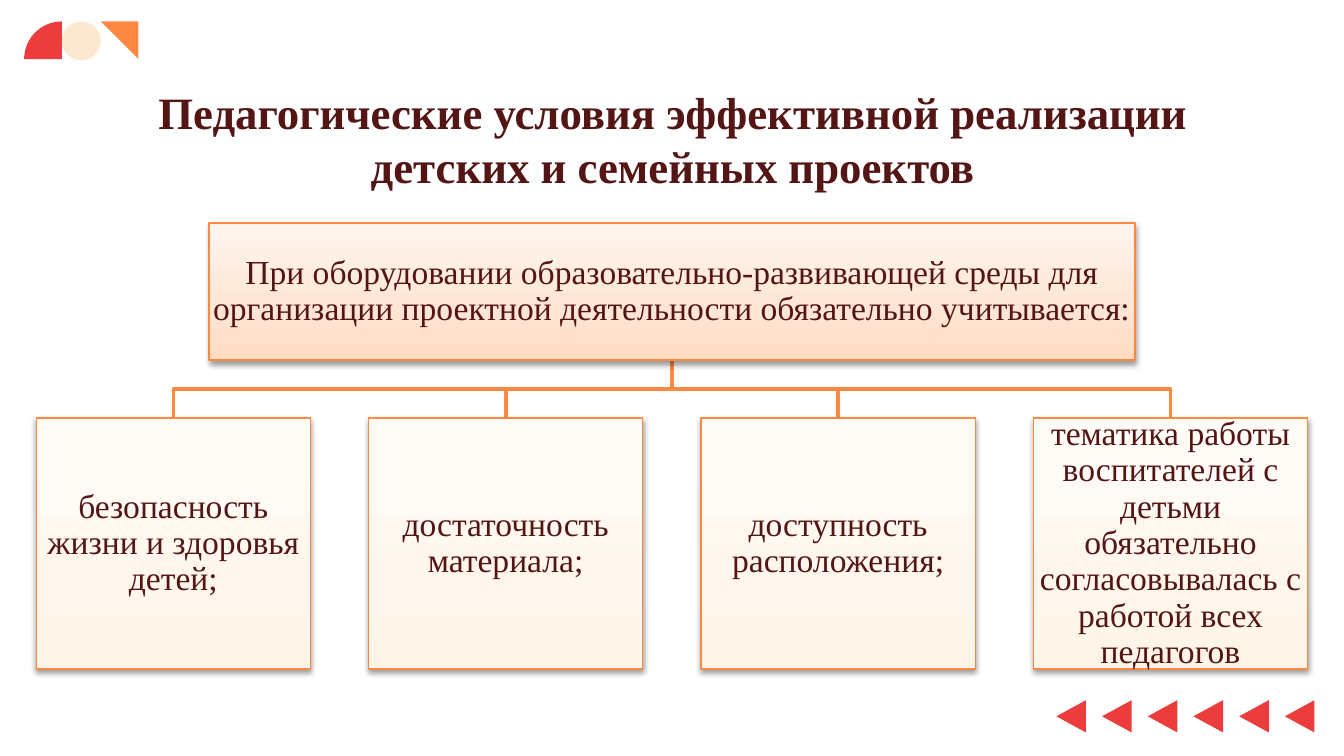
from copy import deepcopy
from math import cos, pi, sin

from lxml import etree
from pptx import Presentation
from pptx.dml.color import RGBColor
from pptx.enum.shapes import MSO_SHAPE
from pptx.enum.text import MSO_ANCHOR, PP_ALIGN
from pptx.oxml.ns import qn
from pptx.util import Inches, Pt

RECTANGLE, OVAL, TRIANGLE = MSO_SHAPE.RECTANGLE, MSO_SHAPE.OVAL, MSO_SHAPE.ISOSCELES_TRIANGLE
CENTER, MIDDLE, TOP = PP_ALIGN.CENTER, MSO_ANCHOR.MIDDLE, MSO_ANCHOR.TOP

COLORS = {"red": "ED3C3C", "orange": "FF8941", "cream": "FCE8D1", "text": "541515", "shadow": "000000"}
ROOT_GRADIENT = [(0, "FFDBC1"), (0.35, "FFE5D3"), (1, "FFF5EF")]
CHILD_GRADIENT = [(0, "FFF4E8"), (0.35, "FFF7EE"), (1, "FFFCF8")]
FONT = "Times New Roman"

TITLE = "Педагогические условия эффективной реализации детских и семейных проектов"
REQUIREMENT = ("При оборудовании образовательно-развивающей среды для "
               "организации проектной деятельности обязательно учитывается:")
CONDITIONS = [
    "безопасность жизни и здоровья детей;",
    "достаточность материала;",
    "доступность расположения;",
    "тематика работы воспитателей с детьми обязательно согласовывалась с работой всех педагогов",
]


def rgb(name):
    """Return the palette colour with this name."""
    return RGBColor.from_string(COLORS[name])


def paint(shape, color):
    """Give a shape a plain fill without line or shadow."""
    shape.shadow.inherit = False
    shape.fill.solid()
    shape.fill.fore_color.rgb = rgb(color)
    shape.line.fill.background()


def outline(slide, points, close):
    """Draw a freeform through points given in inches."""
    corners = [(Inches(x), Inches(y)) for x, y in points]
    builder = slide.shapes.build_freeform(*corners[0])
    builder.add_line_segments(corners[1:], close=close)
    return builder.convert_to_shape()


def write(shape, text, size, inset, anchor, spacing, bold=False):
    """Put one centred paragraph into a shape."""
    frame = shape.text_frame
    frame_format = {"word_wrap": True, "vertical_anchor": anchor}
    frame_format.update({f"margin_{side}": Inches(inset) for side in ("left", "top", "right", "bottom")})
    for name, value in frame_format.items():
        setattr(frame, name, value)
    paragraph = frame.paragraphs[0]
    paragraph.alignment, paragraph.line_spacing = CENTER, spacing
    run = paragraph.add_run()
    run.text = text
    for name, value in {"name": FONT, "size": Pt(size), "bold": bold}.items():
        setattr(run.font, name, value)
    run.font.color.rgb = rgb("text")


def add_emblem(slide, left, top, size):
    """Draw the quarter disc, disc and corner triangle in a row."""
    steps = 24
    angles = [pi / 2 * step / steps for step in range(steps + 1)]
    right, bottom = left + size, top + size
    arc = [(right - size * sin(a), bottom - size * cos(a)) for a in angles]
    paint(outline(slide, arc + [(right, bottom)], True), "red")
    corner = left + 2 * size + 0.01
    paint(outline(slide, [(corner, top), (corner + size, bottom), (corner + size, top)], True), "orange")
    disc = slide.shapes.add_shape(OVAL, Inches(right), Inches(top), Inches(0.29), Inches(0.29))
    paint(disc, "cream")


def add_arrow_row(slide, left, top, count=6, pitch=0.34):
    """Draw a row of triangles that point left."""
    for index in range(count):
        arrow = slide.shapes.add_shape(
            TRIANGLE, Inches(left + index * pitch), Inches(top), Inches(0.24), Inches(0.22))
        arrow.rotation = 270
        paint(arrow, "red")


def add_title(slide, left, top, width, height):
    """Write the slide title."""
    title = slide.shapes.add_textbox(Inches(left), Inches(top), Inches(width), Inches(height))
    write(title, TITLE, 24, 0.1, TOP, 1.0, bold=True)


def add_card(slide, left, top, width, height, text, gradient):
    """Draw a shaded box with a soft shadow and its text."""
    card = slide.shapes.add_shape(RECTANGLE, Inches(left), Inches(top), Inches(width), Inches(height))
    card.fill.gradient()
    card.fill.gradient_angle = 90
    properties = card.element.spPr
    stops = properties.find(qn("a:gradFill")).find(qn("a:gsLst"))
    stops.append(deepcopy(stops[0]))
    for stop, (position, color) in zip(card.fill.gradient_stops, gradient):
        stop.position = position
        stop.color.rgb = RGBColor.from_string(color)
    card.line.color.rgb = rgb("orange")
    card.line.width = Pt(0.75)
    card.shadow.inherit = False
    shadow = etree.SubElement(
        properties.find(qn("a:effectLst")), qn("a:outerShdw"), blurRad=str(Pt(3.1)),
        dist=str(Pt(1.6)), dir="5400000", rotWithShape="0")
    tone = etree.SubElement(shadow, qn("a:srgbClr"), val=COLORS["shadow"])
    etree.SubElement(tone, qn("a:alpha"), val="38000")
    write(card, text, 18, 0.01, MIDDLE, 0.9)


def add_branch(slide, start_x, start_y, end_x, end_y):
    """Draw an elbow line from the root box down to a child box."""
    bend = (start_y + end_y) / 2
    branch = outline(slide, [(start_x, start_y), (start_x, bend), (end_x, bend), (end_x, end_y)], False)
    branch.shadow.inherit = False
    branch.fill.background()
    branch.line.color.rgb = rgb("orange")
    branch.line.width = Pt(2)


def add_hierarchy(slide, left, top, width, height):
    """Draw the requirement above its evenly spaced conditions."""
    root_width, root_height = 6.89, 1.02
    child_width, child_height = 2.04, 1.87
    middle = left + width / 2
    child_top = top + height - child_height
    pitch = (width - child_width) / (len(CONDITIONS) - 1)
    lefts = [left + index * pitch for index in range(len(CONDITIONS))]
    for child_left in lefts:
        add_branch(slide, middle, top + root_height, child_left + child_width / 2, child_top)
    add_card(slide, middle - root_width / 2, top, root_width, root_height, REQUIREMENT, ROOT_GRADIENT)
    for child_left, condition in zip(lefts, CONDITIONS):
        add_card(slide, child_left, child_top, child_width, child_height, condition, CHILD_GRADIENT)


def main():
    """Build and save the slide."""
    deck = Presentation()
    deck.slide_width = Inches(10)
    deck.slide_height = deck.slide_width * 9 // 16
    slide = deck.slides.add_slide(deck.slide_layouts[6])
    add_arrow_row(slide, 7.85, 5.22)
    add_emblem(slide, 0.18, 0.16, 0.28)
    add_title(slide, 0.79, 0.53, 8.43, 0.63)
    add_hierarchy(slide, 0.27, 1.66, 9.46, 3.32)
    deck.save("out.pptx")


if __name__ == "__main__":
    main()
